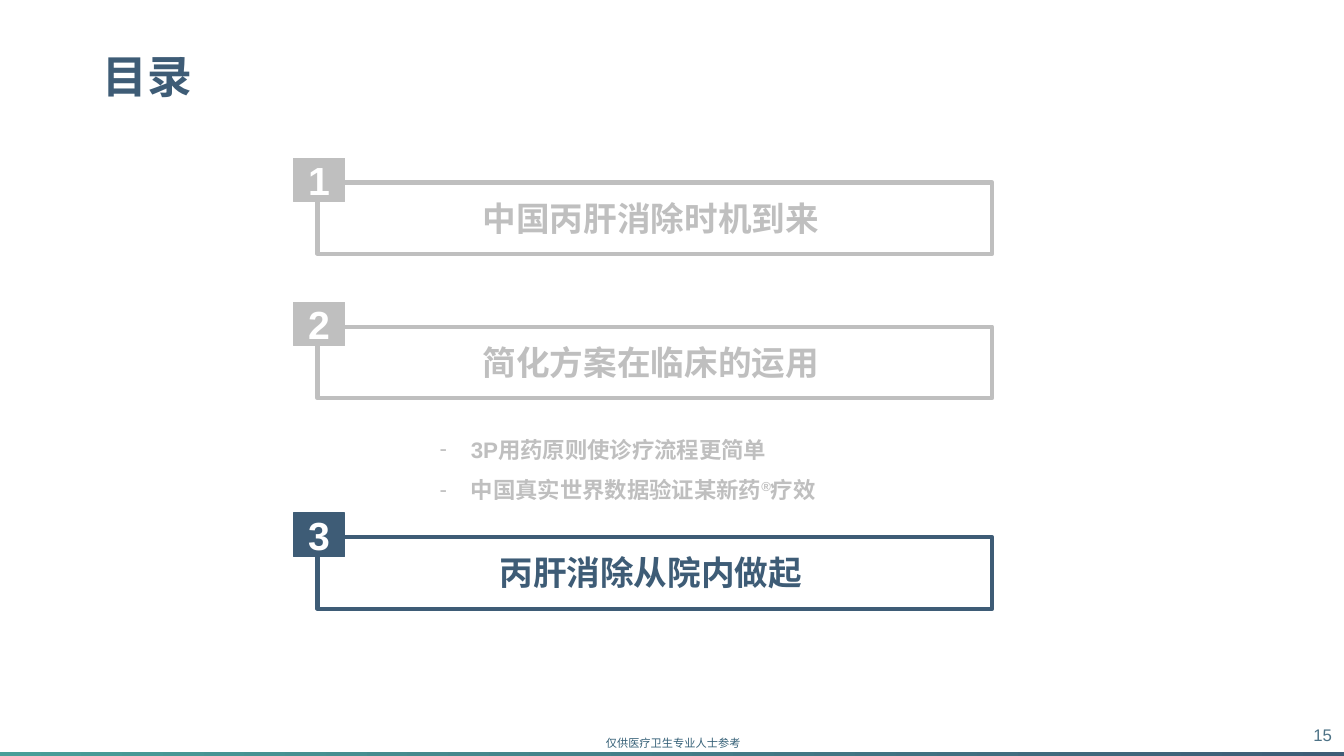
import pptx
import pptx.dml.color
import pptx.enum.shapes
import pptx.enum.text
import pptx.oxml.ns
import pptx.util
from dataclasses import dataclass
from lxml import etree

Inches = pptx.util.Inches
Pt = pptx.util.Pt
Align = pptx.enum.text.PP_ALIGN
Anchor = pptx.enum.text.MSO_ANCHOR
Fit = pptx.enum.text.MSO_AUTO_SIZE
RECT = pptx.enum.shapes.MSO_SHAPE.RECTANGLE

COLORS = {
    "navy": "3E5C76",
    "teal": "489E98",
    "gray": "BFBFBF",
    "white": "FFFFFF",
    "note": "356077",
    "page": "4D7286",
}


@dataclass
class Entry:
    label: str
    top: float
    color: str


ENTRIES = [
    Entry("中国丙肝消除时机到来", 1.57, "gray"),
    Entry("简化方案在临床的运用", 3.0, "gray"),
    Entry("丙肝消除从院内做起", 5.09, "navy"),
]
POINTS = [
    ["3P用药原则使诊疗流程更简单"],
    ["中国真实世界数据验证某新药", "®", "疗效"],
]


def rgb(color: str) -> pptx.dml.color.RGBColor:
    return pptx.dml.color.RGBColor.from_string(COLORS[color])


def place(shape, left: float, top: float, width: float, height: float) -> None:
    shape.left, shape.top = Inches(left), Inches(top)
    shape.width, shape.height = Inches(width), Inches(height)


def style(frame, size: float, color: str, bold: bool = True,
          align=Align.LEFT, anchor=Anchor.TOP) -> None:
    """Format every run and paragraph of a text frame."""
    frame.auto_size = Fit.NONE
    frame.vertical_anchor = anchor
    for para in frame.paragraphs:
        para.alignment = align
        para.space_before = Pt(0)
        for run in para.runs:
            run.font.name = "Arial"
            run.font.size = Pt(size)
            run.font.bold = bold
            run.font.color.rgb = rgb(color)


def add_text(slide, box: tuple, text: str, size: float, color: str,
             wrap: bool = True, **looks) -> None:
    frame = slide.shapes.add_textbox(*map(Inches, box)).text_frame
    frame.text = text
    frame.word_wrap = wrap
    style(frame, size, color, **looks)


def add_rect(slide, box: tuple, color: str, weight: float):
    """Add an unfilled rectangle with a coloured outline."""
    shape = slide.shapes.add_shape(RECT, *map(Inches, box))
    shape.shadow.inherit = False
    shape.fill.background()
    shape.line.color.rgb = rgb(color)
    shape.line.width = Pt(weight)
    return shape


def add_entry(slide, number: int, entry: Entry) -> None:
    add_rect(slide, (3.15, entry.top + 0.24, 6.69, 0.71), entry.color, 3)
    badge = add_rect(slide, (2.91, entry.top, 0.51, 0.43), entry.color, 1)
    badge.fill.solid()
    badge.fill.fore_color.rgb = rgb(entry.color)
    badge.text_frame.text = str(number)
    style(badge.text_frame, 28, "white", align=Align.CENTER, anchor=Anchor.MIDDLE)
    add_text(slide, (3.04, entry.top + 0.34, 6.83, 0.5), entry.label, 24,
             entry.color, align=Align.CENTER)


def add_dash(para) -> None:
    """Give a paragraph a hanging dash bullet."""
    props = para._p.get_or_add_pPr()
    props.set("marL", str(Inches(0.31)))
    props.set("indent", str(-Inches(0.31)))
    qn = pptx.oxml.ns.qn
    etree.SubElement(props, qn("a:buFont")).set("typeface", "Arial")
    etree.SubElement(props, qn("a:buChar")).set("char", "-")


def fill_list(body) -> None:
    place(body, 4.26, 4.14, 4.14, 0.86)
    frame = body.text_frame
    for index, parts in enumerate(POINTS):
        para = frame.paragraphs[0] if index == 0 else frame.add_paragraph()
        add_dash(para)
        para.line_spacing = 1.5
        for part in parts:
            run = para.add_run()
            run.text = part
            if part == "®":
                run._r.get_or_add_rPr().set("baseline", "30000")
    style(frame, 16, "gray")


def add_foot(slide) -> None:
    bar = slide.shapes.add_shape(RECT, 0, Inches(7.46), Inches(13.33), Inches(0.04))
    bar.shadow.inherit = False
    bar.line.fill.background()
    bar.fill.gradient()
    bar.fill.gradient_angle = 0
    for stop, color, spot in zip(bar.fill.gradient_stops, ("teal", "navy"), (0, 1)):
        stop.color.rgb = rgb(color)
        stop.position = spot
    add_text(slide, (5.91, 7.26, 1.55, 0.24), "仅供医疗卫生专业人士参考", 8, "note",
             wrap=False, bold=False)
    add_text(slide, (12.73, 7.08, 0.58, 0.42), "15", 12, "page",
             bold=False, align=Align.RIGHT, anchor=Anchor.MIDDLE)


def main() -> None:
    deck = pptx.Presentation()
    deck.slide_width, deck.slide_height = Inches(13.33), Inches(7.5)
    slide = deck.slides.add_slide(deck.slide_layouts[1])
    title = slide.shapes.title
    place(title, 0.92, 0.4, 11.5, 0.77)
    title.text_frame.text = "目录"
    title.text_frame.paragraphs[0].line_spacing = 0.9
    style(title.text_frame, 32, "navy", anchor=Anchor.MIDDLE)
    fill_list(slide.placeholders[1])
    for number, entry in enumerate(ENTRIES, 1):
        add_entry(slide, number, entry)
    add_foot(slide)
    deck.save("out.pptx")


if __name__ == "__main__":
    main()
